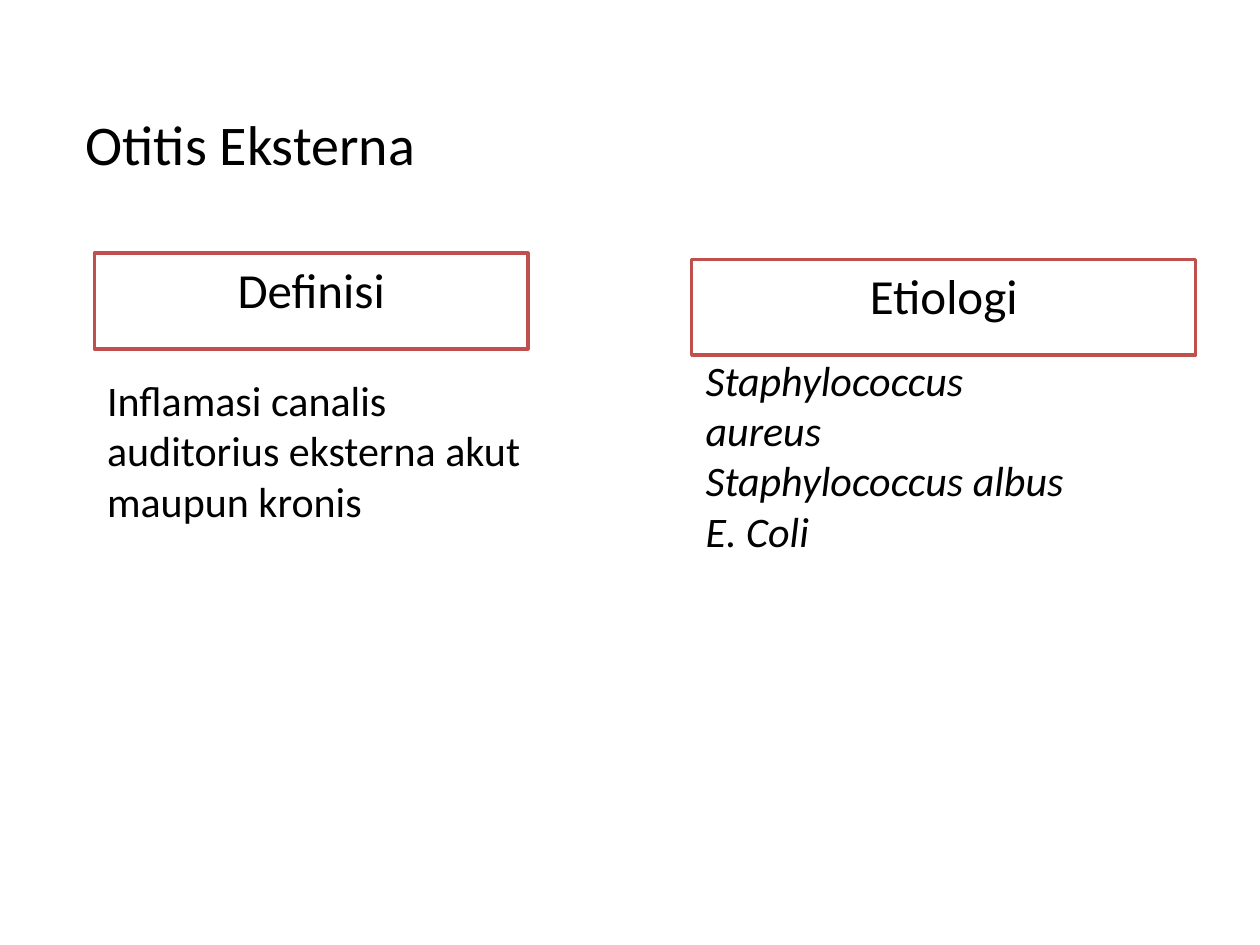
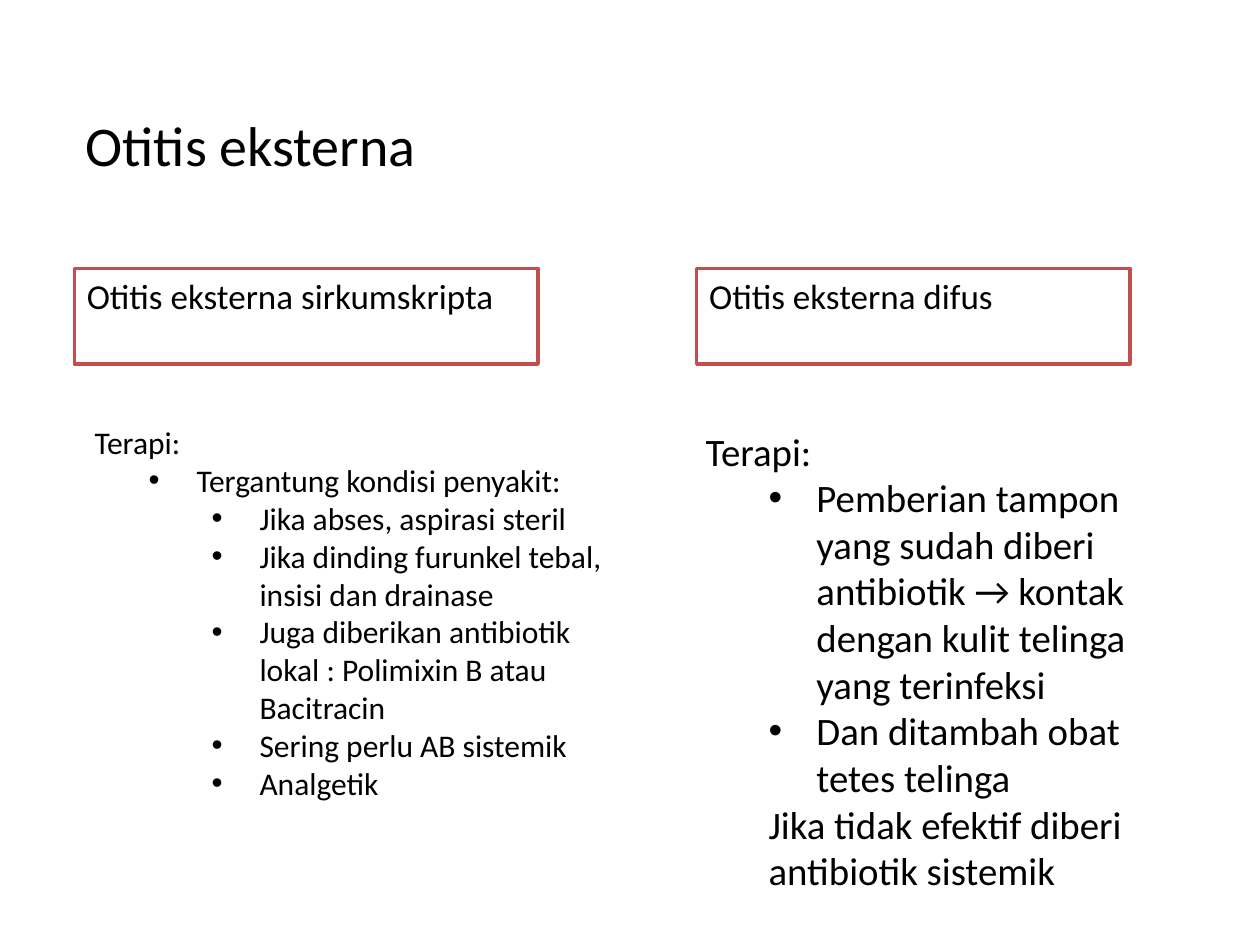
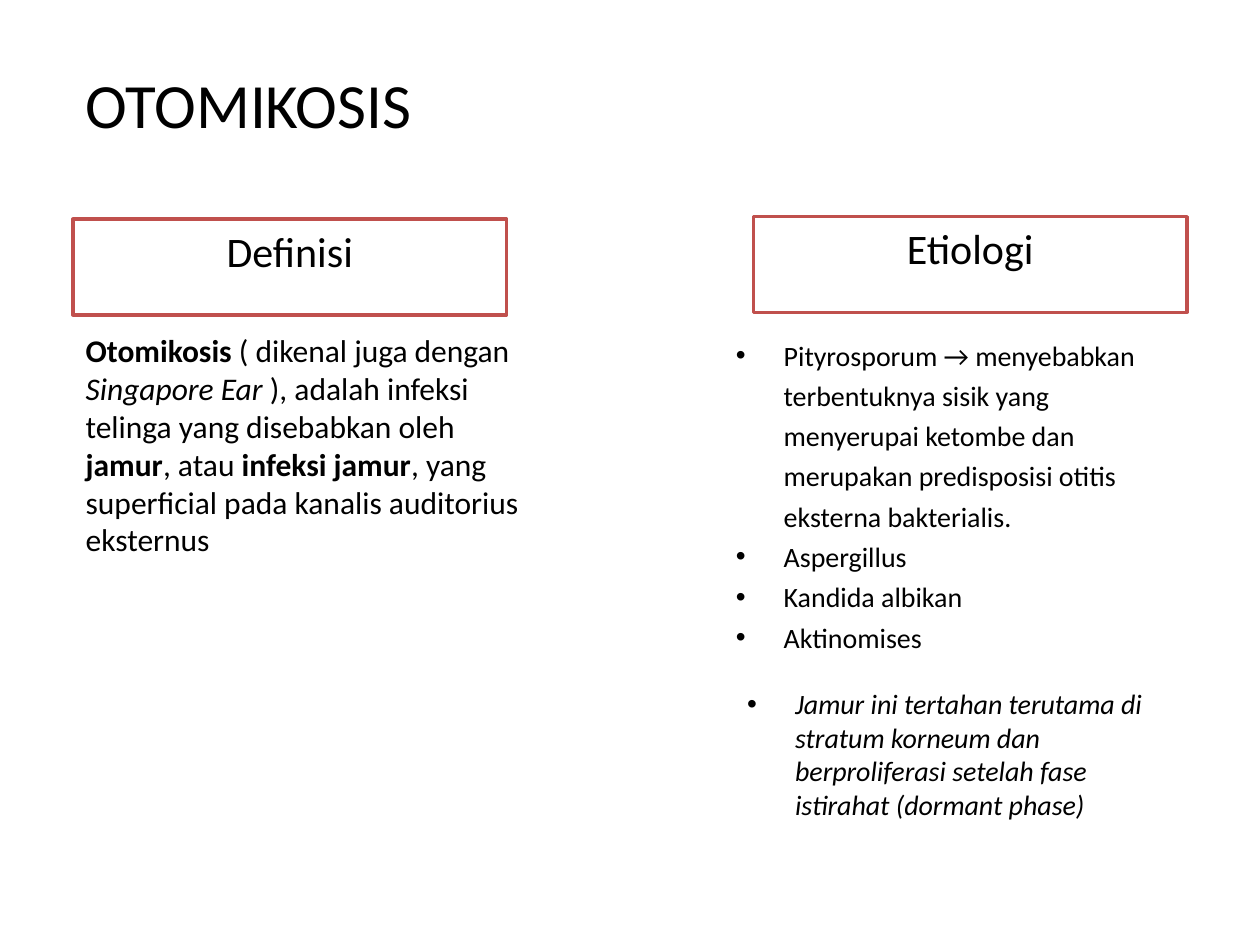
from lxml.etree import SubElement
from pptx import Presentation
from pptx.dml.color import RGBColor
from pptx.enum.shapes import MSO_SHAPE
from pptx.enum.text import MSO_ANCHOR, MSO_AUTO_SIZE, PP_ALIGN
from pptx.oxml.ns import qn
from pptx.util import Inches, Pt

FONT, BLACK, WHITE, RED = "Calibri", "000000", "FFFFFF", "C0504D"
TWO_CONTENT = 3
LEFT, TITLE_SIZE = 0.58, (7.54, 1.18)
HEADING_HEIGHT, BODY_WIDTH, BODY_HEIGHT = 0.76, 3.68, 3.18
HANG = 0.38
PLAIN, BOLD, ITALIC = {}, {"bold": True}, {"italic": True}

# Paragraph kinds: left indent, bullet, and spacing where it differs
FLUSH = {"indent": 0}
NUDGED = {"indent": 0.07}
INDENTED = {"indent": 0.5}
BULLET = {"indent": 0.88, "bullet": "•"}
SUB_BULLET = {"indent": 1.38, "bullet": "•"}
LOOSE_BULLET = {"indent": HANG, "bullet": "•", "line_spacing": 1.2}
NOTE_BULLET = {"indent": 0.47, "bullet": "•", "space_before": Pt(19)}

# Each body line is (kind, text) or (kind, [(text, style), ...])
SLIDES = [
    {"title": ("Otitis Eksterna", 0.82, 32),
     "heading": {"size": 28, "align": PP_ALIGN.CENTER},
     "columns": [
         {"heading": ("Definisi", 0.75, 2.01, 3.44),
          "body": (0.75, 2.92, BODY_WIDTH, 24),
          "lines": [(FLUSH, "Inflamasi canalis auditorius eksterna akut maupun kronis")]},
         {"heading": ("Etiologi", 5.49, 2.06, 4),
          "body": (5, 2.76, BODY_WIDTH, 24),
          "lines": [(INDENTED, [(name, ITALIC)]) for name in
                    ("Staphylococcus aureus", "Staphylococcus albus", "E. Coli")]},
     ]},
    {"title": ("Otitis eksterna", 0.83, 32),
     "heading": {"size": 20, "align": PP_ALIGN.LEFT},
     "columns": [
         {"heading": ("Otitis eksterna sirkumskripta", 0.59, 2.13, 3.68),
          "body": (LEFT, 3.31, 4.42, 18),
          "lines": [
              (NUDGED, "Terapi:"),
              (BULLET, "Tergantung kondisi penyakit:"),
              (SUB_BULLET, "Jika abses, aspirasi steril"),
              (SUB_BULLET, "Jika dinding furunkel tebal, insisi dan drainase"),
              (SUB_BULLET, "Juga diberikan antibiotik lokal : Polimixin B atau Bacitracin"),
              (SUB_BULLET, "Sering perlu AB sistemik"),
              (SUB_BULLET, "Analgetik")]},
         {"heading": ("Otitis eksterna difus", 5.53, 2.13, 3.44),
          "body": (5.5, 3.34, BODY_WIDTH, 22.2),
          "lines": [
              (FLUSH, "Terapi:"),
              (BULLET, "Pemberian tampon yang sudah diberi antibiotik → kontak "
                       "dengan kulit telinga yang terinfeksi"),
              (BULLET, "Dan ditambah obat tetes telinga"),
              (INDENTED, "Jika tidak efektif diberi antibiotik sistemik")]},
     ]},
    {"title": ("OTOMIKOSIS", 0.47, 36),
     "heading": {"size": 24, "align": PP_ALIGN.CENTER},
     "columns": [
         {"heading": ("Definisi", LEFT, 1.74, 3.44),
          "body": (LEFT, 2.58, BODY_WIDTH, 18),
          "lines": [(FLUSH, [
              ("Otomikosis", BOLD), (" ( dikenal juga dengan ", PLAIN),
              ("Singapore Ear", ITALIC),
              (" ), adalah infeksi telinga yang disebabkan oleh ", PLAIN),
              ("jamur", BOLD), (", atau ", PLAIN), ("infeksi jamur", BOLD),
              (", yang superficial pada kanalis auditorius eksternus", PLAIN)])]},
         {"heading": ("Etiologi", 5.98, 1.72, 3.44),
          "body": (5.74, 2.58, BODY_WIDTH, 16),
          "lines": [
              (LOOSE_BULLET, "Pityrosporum → menyebabkan terbentuknya sisik yang menyerupai "
                             "ketombe dan merupakan predisposisi otitis eksterna bakterialis."),
              (LOOSE_BULLET, "Aspergillus"),
              (LOOSE_BULLET, "Kandida albikan"),
              (LOOSE_BULLET, "Aktinomises"),
              (NOTE_BULLET, [("Jamur ini tertahan terutama di stratum korneum dan "
                              "berproliferasi setelah fase istirahat (dormant phase)", ITALIC)])]},
     ]},
]


def color(value):
    return RGBColor.from_string(value)


def set_all(target, values):
    for name, value in values.items():
        setattr(target, name, value)


def place(shape, left, top, width, height):
    set_all(shape, {"left": Inches(left), "top": Inches(top),
                    "width": Inches(width), "height": Inches(height)})


def set_indent(paragraph, indent, bullet=None):
    properties = paragraph._p.get_or_add_pPr()
    properties.set("marL", str(Inches(indent)))
    properties.set("indent", str(Inches(-HANG if bullet else 0)))
    if bullet:
        SubElement(properties, qn("a:buChar")).set("char", bullet)
    else:
        SubElement(properties, qn("a:buNone"))


def write(shape, lines, size, align=PP_ALIGN.LEFT):
    frame = shape.text_frame
    set_all(frame, {"word_wrap": True, "auto_size": MSO_AUTO_SIZE.NONE,
                    "vertical_anchor": MSO_ANCHOR.TOP})
    for number, (kind, content) in enumerate(lines):
        paragraph = frame.add_paragraph() if number else frame.paragraphs[0]
        set_indent(paragraph, kind["indent"], kind.get("bullet"))
        set_all(paragraph, {"alignment": align,
                            "line_spacing": kind.get("line_spacing", 1.0),
                            "space_before": kind.get("space_before", Pt(0))})
        for text, style in [(content, PLAIN)] if isinstance(content, str) else content:
            run = paragraph.add_run()
            run.text = text
            set_all(run.font, {"name": FONT, "size": Pt(size), **style})
            run.font.color.rgb = color(BLACK)


def add_heading(slide, text, left, top, width, size, align):
    box = slide.shapes.add_shape(MSO_SHAPE.RECTANGLE, Inches(left), Inches(top),
                                 Inches(width), Inches(HEADING_HEIGHT))
    box.shadow.inherit = False
    box.fill.solid()
    box.fill.fore_color.rgb = color(WHITE)
    box.line.color.rgb = color(RED)
    box.line.width = Pt(2)
    write(box, [(FLUSH, text)], size, align)


def add_slide(presentation, content):
    slide = presentation.slides.add_slide(presentation.slide_layouts[TWO_CONTENT])
    text, top, size = content["title"]
    title, *bodies = list(slide.placeholders)[:3]
    place(title, LEFT, top, *TITLE_SIZE)
    write(title, [(FLUSH, text)], size)
    for body, column in zip(bodies, content["columns"]):
        left, top, width, size = column["body"]
        place(body, left, top, width, BODY_HEIGHT)
        write(body, column["lines"], size)
        add_heading(slide, *column["heading"], **content["heading"])


def main():
    presentation = Presentation()
    set_all(presentation, {"slide_width": Inches(10), "slide_height": Inches(7.5)})
    for content in SLIDES:
        add_slide(presentation, content)
    presentation.save("out.pptx")


if __name__ == "__main__":
    main()
